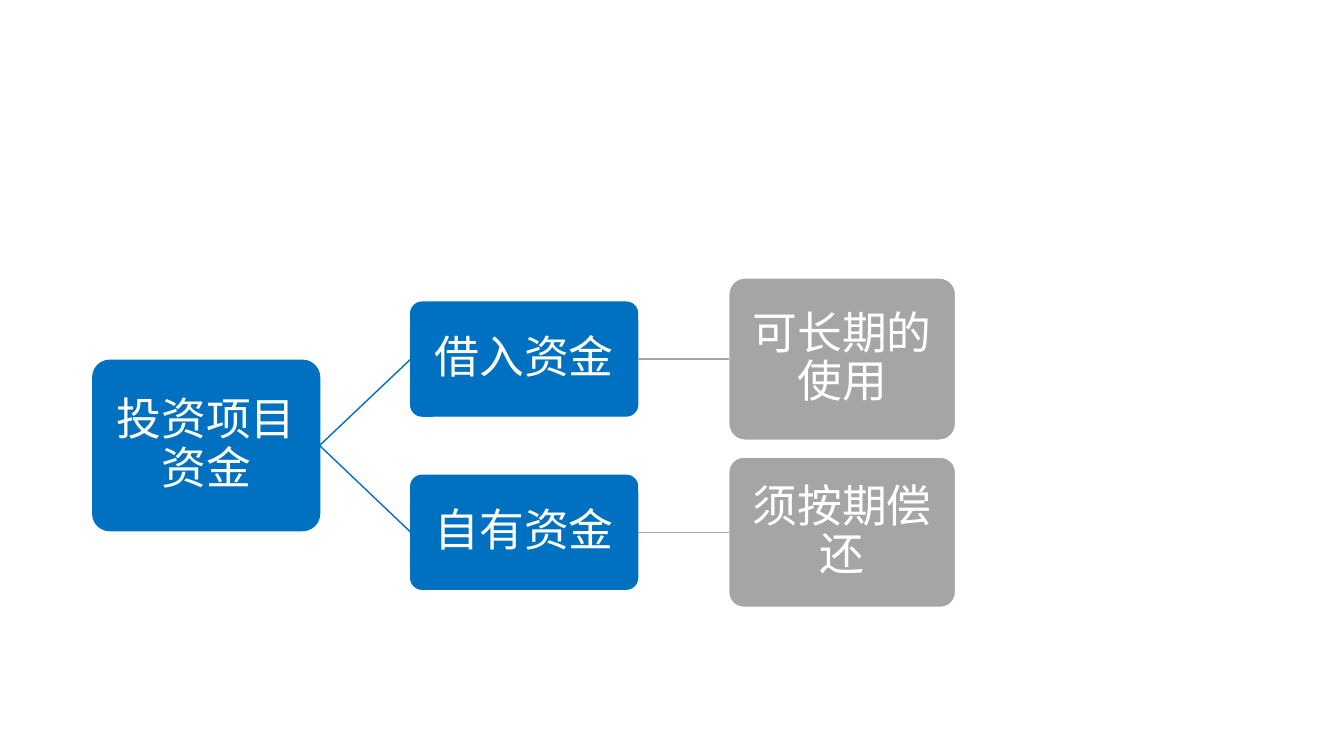
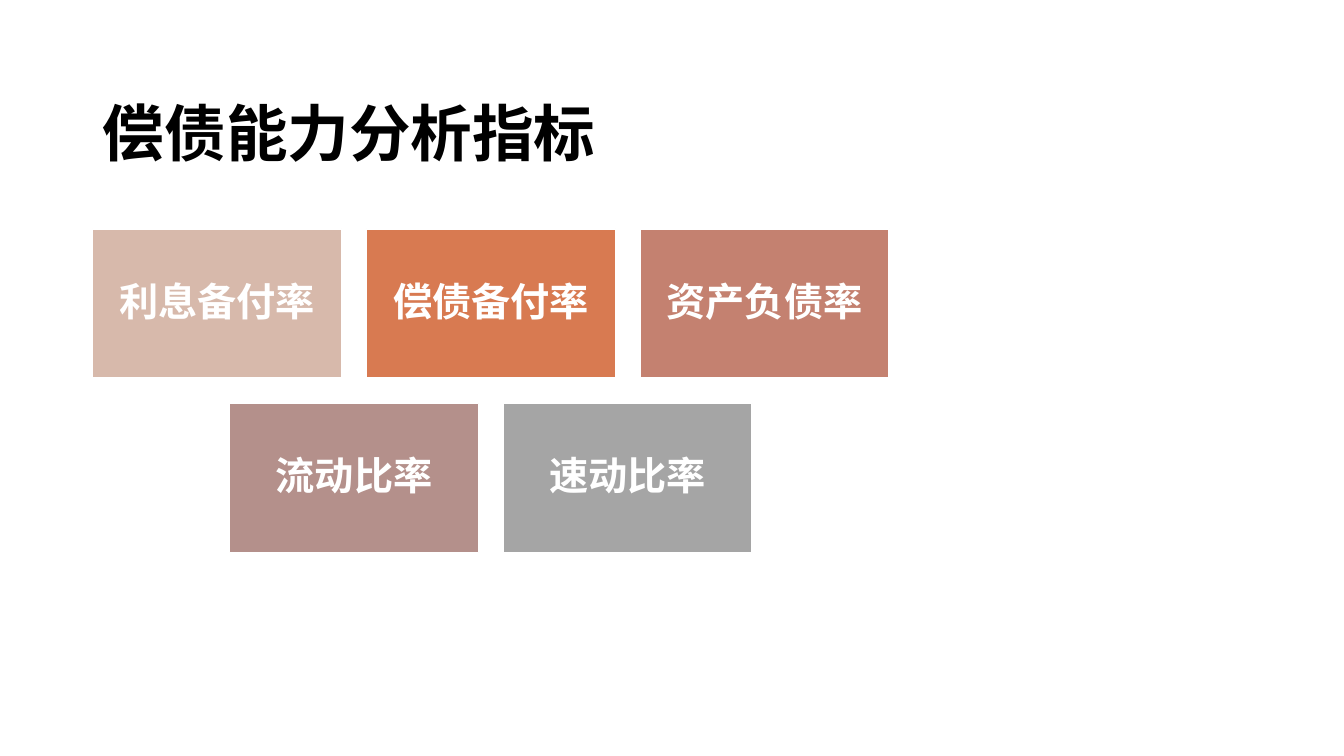
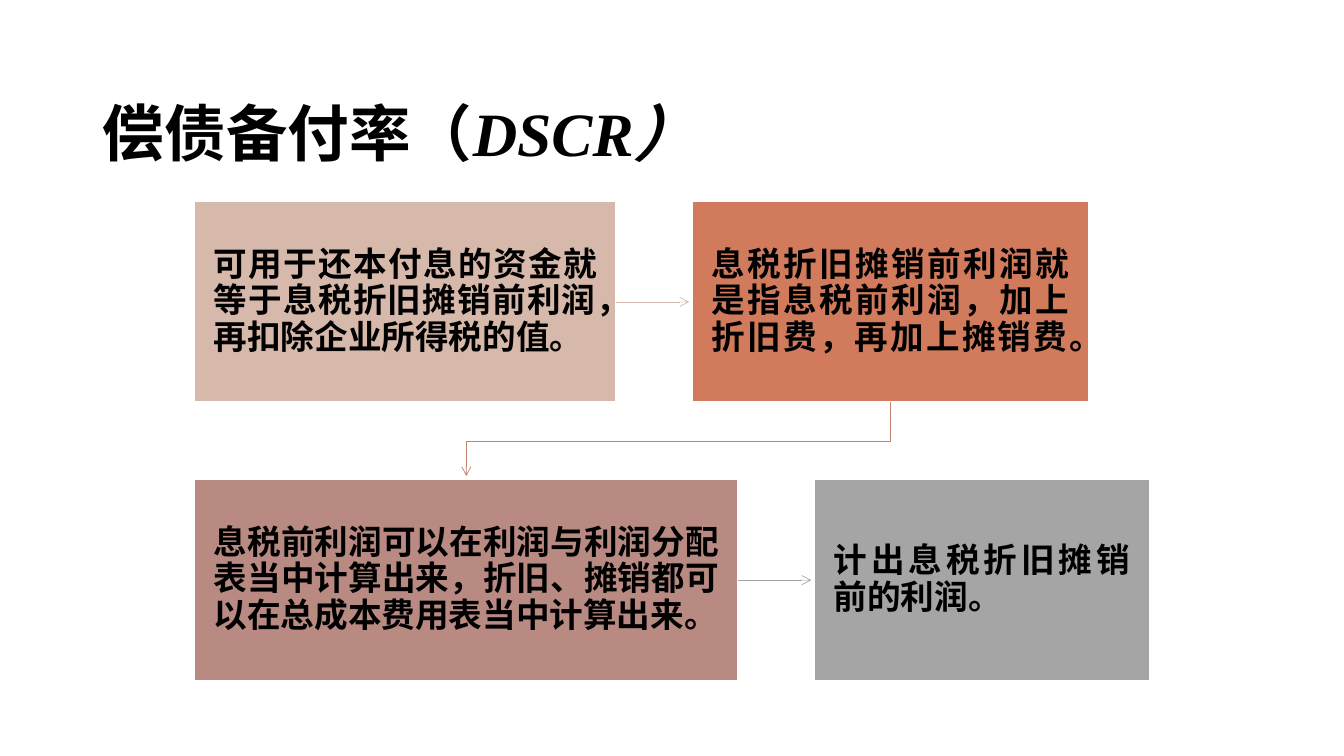
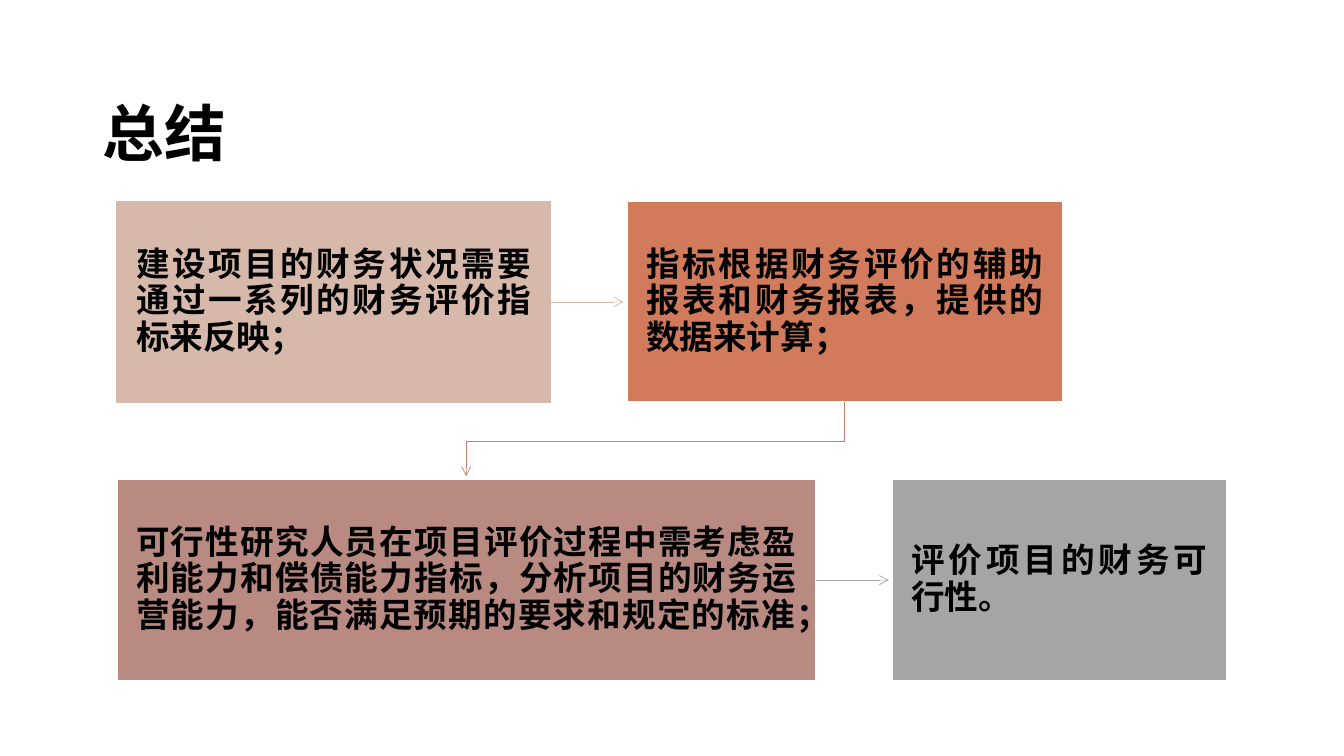
from dataclasses import dataclass
from typing import Optional

from pptx import Presentation
from pptx.dml.color import RGBColor
from pptx.enum.lang import MSO_LANGUAGE_ID
from pptx.enum.shapes import MSO_CONNECTOR, MSO_SHAPE
from pptx.enum.text import MSO_ANCHOR, MSO_AUTO_SIZE, PP_ALIGN
from pptx.oxml.ns import qn
from pptx.util import Emu, Inches, Pt
from lxml.etree import SubElement

# Slide and its grid of 100 columns by 100 rows
SLIDE_WIDTH, SLIDE_HEIGHT = Inches(13.333), Inches(7.5)
MARGIN = 6.9
TITLE_ONLY, BLANK = 5, 6
TOP, RIGHT, BOTTOM, LEFT = 0, 3, 2, 1

# Colours
BLACK = RGBColor(0x00, 0x00, 0x00)
WHITE = RGBColor(0xFF, 0xFF, 0xFF)
BLUE = RGBColor(0x00, 0x70, 0xC0)
GRAY = RGBColor(0xA5, 0xA5, 0xA5)
SAND = RGBColor(0xD7, 0xB9, 0xAB)
ORANGE = RGBColor(0xD8, 0x7A, 0x51)
RUST = RGBColor(0xD1, 0x7B, 0x5C)
ROSE = RGBColor(0xC4, 0x81, 0x70)
MAUVE = RGBColor(0xB4, 0x90, 0x8B)
BROWN = RGBColor(0xB9, 0x8A, 0x82)

# Fonts
CHINESE_FONT = "Noto Sans CJK SC"
LATIN_FONT = "Times New Roman"


@dataclass(frozen=True)
class TextStyle:
    size: int
    color: RGBColor
    bold: bool = True
    font: str = CHINESE_FONT
    alignment: PP_ALIGN = PP_ALIGN.CENTER
    line_spacing: float = 0.9
    inset: float = 0.12


@dataclass(frozen=True)
class Part:
    text: str
    italic: bool = False


@dataclass(frozen=True)
class Area:
    left: float
    top: float
    width: float
    height: float

    @property
    def right(self) -> float:
        return self.left + self.width

    @property
    def bottom(self) -> float:
        return self.top + self.height

    @property
    def center(self) -> float:
        return self.left + self.width / 2

    @property
    def middle(self) -> float:
        return self.top + self.height / 2


@dataclass(frozen=True)
class Node:
    text: str
    level: int
    middle: float
    height: float
    fill: RGBColor
    line: RGBColor
    parent: Optional[int] = None


@dataclass(frozen=True)
class Tile:
    text: str
    fill: RGBColor


@dataclass(frozen=True)
class Step:
    text: str
    width: float
    fill: RGBColor
    line: RGBColor = WHITE


TITLE_STYLE = TextStyle(44, BLACK, font=LATIN_FONT, alignment=PP_ALIGN.JUSTIFY,
                        line_spacing=1.5, inset=0.1)
NODE_STYLE = TextStyle(32, WHITE, bold=False, inset=0.02)
TILE_STYLE = TextStyle(28, WHITE)
STEP_STYLE = TextStyle(24, BLACK, alignment=PP_ALIGN.JUSTIFY, inset=0.19)
LATIN_STEP_STYLE = TextStyle(24, BLACK, font=LATIN_FONT,
                             alignment=PP_ALIGN.JUSTIFY, inset=0.19)


def columns(count: float) -> Emu:
    return Emu(round(SLIDE_WIDTH * count / 100))


def rows(count: float) -> Emu:
    return Emu(round(SLIDE_HEIGHT * count / 100))


# Shared drawing functions
def write_text(shape, parts: list[Part], style: TextStyle) -> None:
    frame = shape.text_frame
    frame.word_wrap = True
    frame.auto_size = MSO_AUTO_SIZE.NONE
    frame.vertical_anchor = MSO_ANCHOR.MIDDLE
    frame.margin_left = frame.margin_right = Inches(style.inset)
    frame.margin_top = frame.margin_bottom = Inches(min(style.inset, 0.19))
    paragraph = frame.paragraphs[0]
    paragraph.alignment = style.alignment
    paragraph.line_spacing = style.line_spacing
    for part in parts:
        run = paragraph.add_run()
        run.text = part.text
        font = run.font
        font.size, font.bold = Pt(style.size), style.bold
        if part.italic:
            font.italic = True
        font.language_id = MSO_LANGUAGE_ID.SIMPLIFIED_CHINESE
        font.color.rgb = style.color
        font.name = style.font
        # East Asian typeface
        SubElement(run._r.get_or_add_rPr(), qn("a:ea"), typeface=CHINESE_FONT)


def add_title(slide, parts: list[Part]) -> None:
    title = slide.shapes.title
    title.left, title.top = columns(MARGIN), rows(5.33)
    title.width, title.height = columns(100 - 2 * MARGIN), rows(19.33)
    write_text(title, parts, TITLE_STYLE)


def add_box(slide, area: Area, text: str, style: TextStyle, fill: RGBColor,
            line: RGBColor = WHITE, kind: MSO_SHAPE = MSO_SHAPE.RECTANGLE):
    shape = slide.shapes.add_shape(kind, columns(area.left), rows(area.top),
                                   columns(area.width), rows(area.height))
    shape.shadow.inherit = False
    shape.fill.solid()
    shape.fill.fore_color.rgb = fill
    shape.line.color.rgb = line
    shape.line.width = Pt(1)
    if kind == MSO_SHAPE.ROUNDED_RECTANGLE:
        shape.adjustments[0] = 0.1
    write_text(shape, [Part(text)], style)
    return shape


def format_line(shape, color: RGBColor, width: float, arrow: bool = False) -> None:
    shape.line.color.rgb = color
    shape.line.width = Pt(width)
    properties = shape._element.spPr
    if arrow:
        SubElement(properties.find(qn("a:ln")), qn("a:tailEnd"), type="arrow")
    if properties.find(qn("a:effectLst")) is None:
        SubElement(properties, qn("a:effectLst"))


def add_straight(slide, start: tuple[float, float], end: tuple[float, float]):
    return slide.shapes.add_connector(
        MSO_CONNECTOR.STRAIGHT, columns(start[0]), rows(start[1]),
        columns(end[0]), rows(end[1]))


# Tree of rounded boxes, one column of boxes per level
def add_tree(slide, nodes: list[Node]) -> None:
    node_width, level_pitch = 16.88, 23.66
    boxes = []
    for node in nodes:
        area = Area(MARGIN + node.level * level_pitch,
                    node.middle - node.height / 2, node_width, node.height)
        box = add_box(slide, area, node.text, NODE_STYLE, node.fill, node.line,
                      MSO_SHAPE.ROUNDED_RECTANGLE)
        boxes.append(box)
        if node.parent is not None:
            parent = nodes[node.parent]
            branch = add_straight(slide, (area.left - level_pitch + node_width, parent.middle),
                                  (area.left, node.middle))
            branch.begin_connect(boxes[node.parent], RIGHT)
            branch.end_connect(box, LEFT)
            format_line(branch, node.fill, 1)


# Rows of equal tiles, each row centred under the widest
def add_tiles(slide, tile_rows: list[list[Tile]]) -> None:
    tile_width, tile_height, column_pitch, row_pitch = 18.53, 19.73, 20.36, 23.07
    widest = max(len(tiles) for tiles in tile_rows)
    for row, tiles in enumerate(tile_rows):
        indent = (widest - len(tiles)) / 2
        for column, tile in enumerate(tiles):
            area = Area(MARGIN + (indent + column) * column_pitch,
                        30.27 + row * row_pitch, tile_width, tile_height)
            add_box(slide, area, tile.text, TILE_STYLE, tile.fill)


# Steps, two to a row, joined by arrows
def add_flow(slide, left: float, step_rows: list[list[Step]], style: TextStyle) -> None:
    step_height, gap, row_pitch = 26.53, 5.7, 36.8
    column_clearance, row_clearance = 0.25, 0.5
    last_area = None
    for row, steps in enumerate(step_rows):
        position, last_box = left, None
        for step in steps:
            area = Area(position, 26.67 + row * row_pitch, step.width, step_height)
            box = add_box(slide, area, step.text, style, step.fill, step.line)
            if last_box is not None:
                arrow = add_straight(slide, (last_area.right, area.middle),
                                     (area.left - column_clearance, area.middle))
                arrow.begin_connect(last_box, RIGHT)
                format_line(arrow, SAND if row == 0 else GRAY, 0.5, arrow=True)
            elif last_area is not None:
                turn = (last_area.bottom + area.top) / 2
                corners = [(last_area.center, turn), (area.center, turn),
                           (area.center, area.top - row_clearance)]
                builder = slide.shapes.build_freeform(columns(last_area.center),
                                                      rows(last_area.bottom))
                builder.add_line_segments([(columns(x), rows(y)) for x, y in corners],
                                          close=False)
                elbow = builder.convert_to_shape()
                elbow.fill.background()
                format_line(elbow, ROSE, 0.5, arrow=True)
            last_area, last_box = area, box
            position = area.right + gap


def main() -> None:
    presentation = Presentation()
    presentation.slide_width, presentation.slide_height = SLIDE_WIDTH, SLIDE_HEIGHT

    def new_slide(layout: int, *title_parts: Part):
        slide = presentation.slides.add_slide(presentation.slide_layouts[layout])
        if title_parts:
            add_title(slide, list(title_parts))
        return slide

    # Sources of funds
    add_tree(new_slide(BLANK), [
        Node("投资项目资金", 0, 58.93, 22.53, BLUE, BLUE),
        Node("借入资金", 1, 47.5, 15.07, BLUE, BLUE, parent=0),
        Node("可长期的使用", 2, 47.5, 21.47, GRAY, WHITE, parent=1),
        Node("自有资金", 1, 70.4, 15.07, BLUE, BLUE, parent=0),
        Node("须按期偿还", 2, 70.4, 19.87, GRAY, WHITE, parent=3),
    ])

    # Solvency indicators
    add_tiles(new_slide(TITLE_ONLY, Part("偿债能力分析指标")), [
        [Tile("利息备付率", SAND), Tile("偿债备付率", ORANGE), Tile("资产负债率", ROSE)],
        [Tile("流动比率", MAUVE), Tile("速动比率", GRAY)],
    ])

    # Debt service coverage ratio
    add_flow(new_slide(TITLE_ONLY, Part("偿债备付率（"), Part("DSCR）", italic=True)), 14.48, [
        [Step("可用于还本付息的资金就等于息税折旧摊销前利润，再扣除企业所得税的值。", 31.35, SAND),
         Step("息税折旧摊销前利润就是指息税前利润，加上折旧费，再加上摊销费。", 29.48, RUST)],
        [Step("息税前利润可以在利润与利润分配表当中计算出来，折旧、摊销都可以在总成本费用表当中计算出来。",
              40.43, BROWN),
         Step("计出息税折旧摊销前的利润。", 24.9, GRAY)],
    ], LATIN_STEP_STYLE)

    # Summary
    add_flow(new_slide(TITLE_ONLY, Part("总结")), 8.7, [
        [Step("建设项目的财务状况需要通过一系列的财务评价指标来反映；", 32.25, SAND, SAND),
         Step("指标根据财务评价的辅助报表和财务报表，提供的数据来计算；", 32.4, RUST)],
        [Step("可行性研究人员在项目评价过程中需考虑盈利能力和偿债能力指标，分析项目的财务运营能力，"
              "能否满足预期的要求和规定的标准；", 51.98, BROWN),
         Step("评价项目的财务可行性。", 24.9, GRAY)],
    ], STEP_STYLE)

    presentation.save("out.pptx")


if __name__ == "__main__":
    main()
